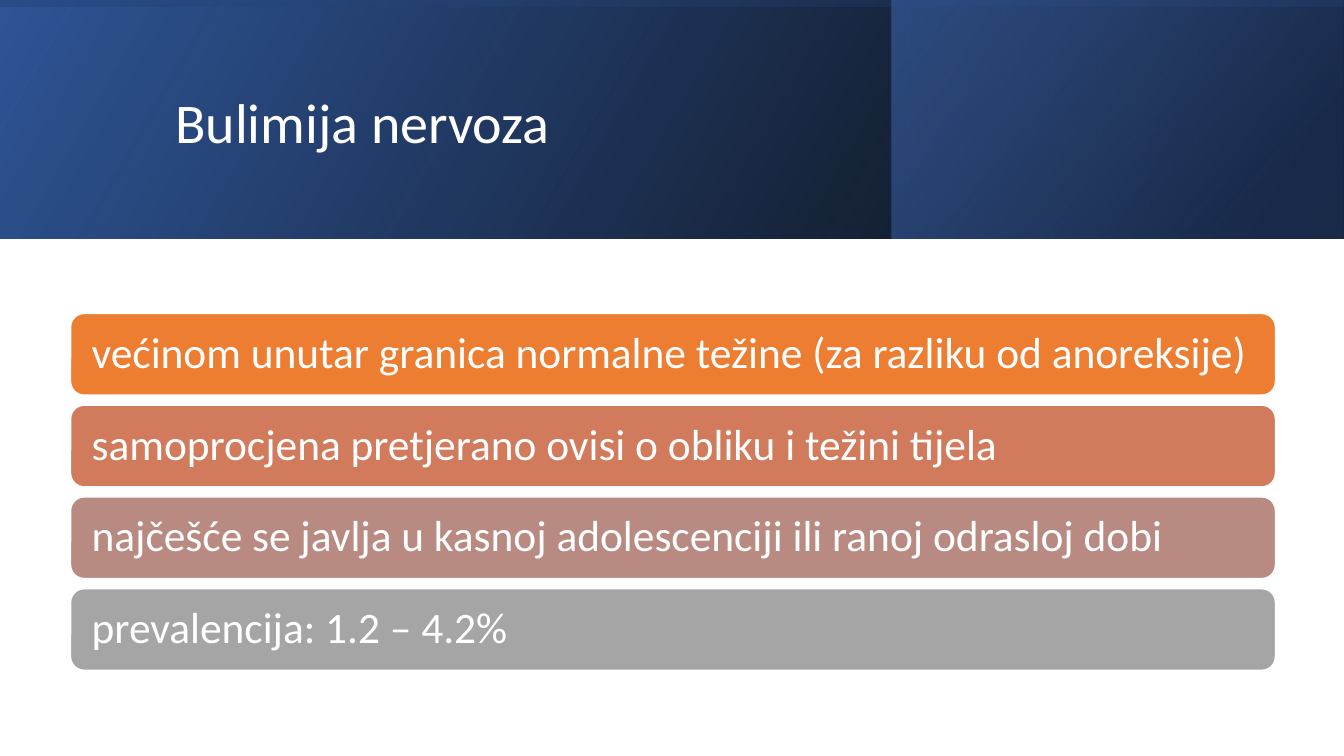
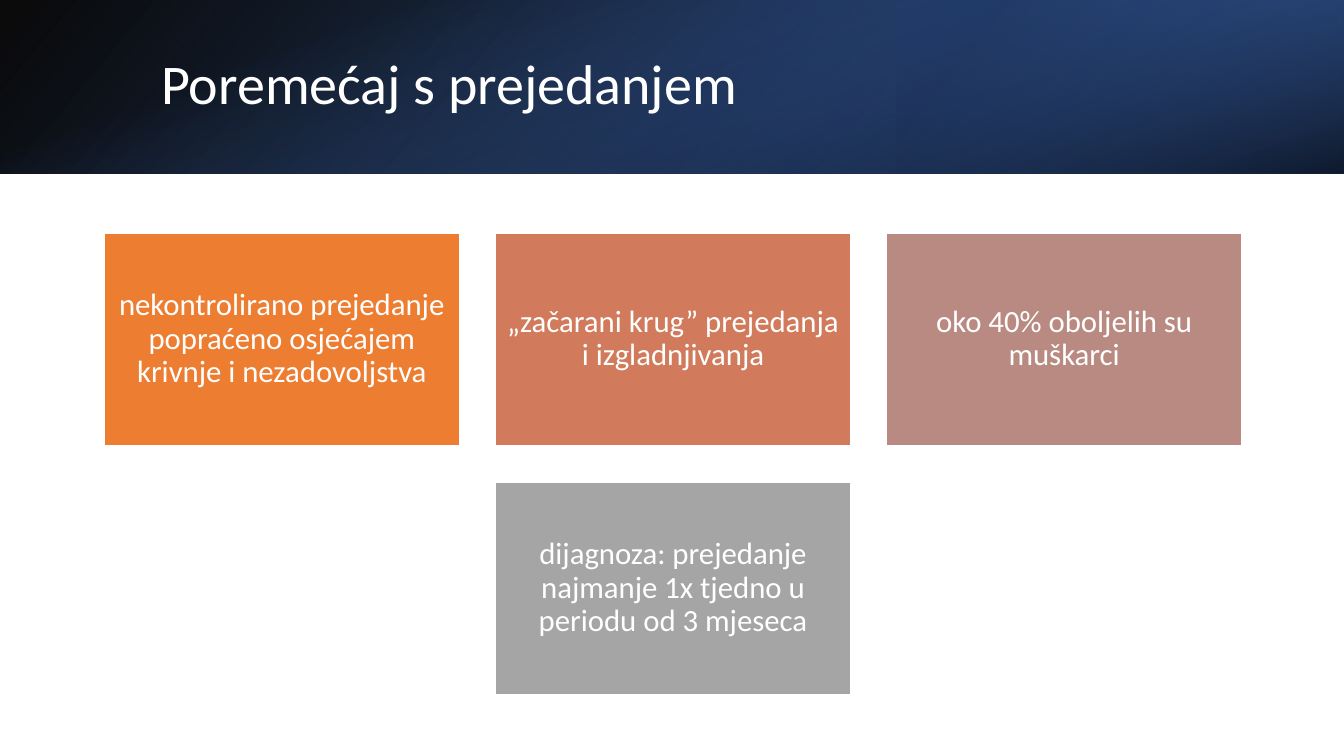
from lxml import etree
from pptx import Presentation
from pptx.dml.color import RGBColor
from pptx.enum.shapes import MSO_SHAPE
from pptx.enum.text import MSO_ANCHOR, PP_ALIGN
from pptx.oxml.ns import qn
from pptx.util import Inches, Pt

RECT, ROUND = MSO_SHAPE.RECTANGLE, MSO_SHAPE.ROUNDED_RECTANGLE
LEFT, CENTER = PP_ALIGN.LEFT, PP_ALIGN.CENTER
MIDDLE = MSO_ANCHOR.MIDDLE

WHITE = RGBColor(0xFF, 0xFF, 0xFF)
BLACK = RGBColor(0x00, 0x00, 0x00)
BLUE = RGBColor(0x2F, 0x55, 0x97)
NAVY = RGBColor(0x20, 0x38, 0x64)
SKY = RGBColor(0x44, 0x72, 0xC4)
CARDS = [
    RGBColor(0xED, 0x7D, 0x31),
    RGBColor(0xD1, 0x7B, 0x5C),
    RGBColor(0xB9, 0x8A, 0x82),
    RGBColor(0xA5, 0xA5, 0xA5),
]
FONT = "Calibri"
WIDE, HIGH = 13.33, 7.5

BASE = [(0, BLACK, 96), (100, BLUE, 100)]

BULIMIA = {
    "title": "Bulimija nervoza",
    "box": (1.64, 0.38, 10.5, 1.72),
    "band": 2.37,
    "layers": [
        {"stops": BASE, "angle": 330},
        {"stops": [(19, NAVY, 68), (100, SKY, 48)], "angle": 320,
         "left": 8.84, "width": 4.48},
        {"stops": [(23, BLUE, 16), (99, BLACK, 45)], "angle": 350, "turn": 270},
    ],
    "items": [
        "većinom unutar granica normalne težine (za razliku od anoreksije)",
        "samoprocjena pretjerano ovisi o obliku i težini tijela",
        "najčešće se javlja u kasnoj adolescenciji ili ranoj odrasloj dobi",
        "prevalencija: 1.2 – 4.2%",
    ],
    "grid": {"cols": 1, "top": 3.11, "size": (11.95, 0.81), "gap": 0.1},
    "kind": ROUND,
    "style": {"size": 31, "inset": 0.17},
}

BINGE = {
    "title": "Poremećaj s prejedanjem",
    "box": (1.5, 0.38, 10.98, 0.96),
    "band": 1.72,
    "layers": [
        {"stops": BASE, "angle": 140},
        {"stops": [(19, NAVY, 68), (100, SKY, 79)], "angle": 320,
         "left": 8.89, "width": 4.44, "turn": 180},
        {"stops": [(23, SKY, 0), (99, BLACK, 74)], "angle": 340,
         "turn": 90, "flip": False},
    ],
    "items": [
        "nekontrolirano prejedanje popraćeno osjećajem krivnje i nezadovoljstva",
        "„začarani krug” prejedanja i izgladnjivanja",
        "oko 40% oboljelih su muškarci",
        "dijagnoza: prejedanje najmanje 1x tjedno u periodu od 3 mjeseca",
    ],
    "grid": {"cols": 3, "top": 2.31, "size": (3.52, 2.11), "gap": 0.36},
    "kind": RECT,
    "style": {"size": 22, "inset": 0.09, "align": CENTER},
}


def write(shape, text, size=40, inset=0.1, align=LEFT):
    frame = shape.text_frame
    frame.word_wrap = True
    frame.vertical_anchor = MIDDLE
    frame.margin_left = frame.margin_right = Inches(inset)
    frame.margin_top = frame.margin_bottom = Inches(min(inset, 0.1))
    para = frame.paragraphs[0]
    para.alignment, para.line_spacing = align, 0.9
    run = para.add_run()
    run.text = text
    run.font.name, run.font.size = FONT, Pt(size)
    run.font.color.rgb = WHITE


def block(slide, kind, *box):
    shape = slide.shapes.add_shape(kind, *map(Inches, box))
    shape.shadow.inherit = False
    return shape


def layer(slide, band, stops, angle, left=0, width=WIDE, turn=0, flip=True):
    wide, high = (band, width) if turn % 180 else (width, band)
    x = left + (width - wide) / 2
    shape = block(slide, RECT, x, (band - high) / 2, wide, high)
    shape.rotation = turn
    shape.line.fill.background()
    shape.fill.gradient()
    shape.fill.gradient_angle = 360 - angle
    props = shape._element.spPr
    if flip:
        props.find(qn("a:xfrm")).set("flipH", "1")
    nodes = props.iter(qn("a:gs"))
    for stop, node, (place, color, alpha) in zip(
            shape.fill.gradient_stops, nodes, stops):
        stop.position = place / 100
        stop.color.rgb = color
        tint = node.find(qn("a:srgbClr"))
        etree.SubElement(tint, qn("a:alpha")).set("val", str(alpha * 1000))


def cards(slide, items, kind, style, cols, top, size, gap):
    wide, high = size
    for i, (text, color) in enumerate(zip(items, CARDS)):
        row, col = divmod(i, cols)
        count = min(cols, len(items) - row * cols)
        left = (WIDE + 0.02 - count * wide - (count - 1) * gap) / 2
        x, y = left + col * (wide + gap), top + row * (high + gap)
        card = block(slide, kind, x, y, wide, high)
        card.fill.solid()
        card.fill.fore_color.rgb = color
        card.line.color.rgb = WHITE
        card.line.width = Pt(1)
        write(card, text, **style)


def build(deck, page):
    slide = deck.slides.add_slide(deck.slide_layouts[6])
    for part in page["layers"]:
        layer(slide, page["band"], **part)
    title = slide.shapes.add_textbox(*map(Inches, page["box"]))
    write(title, page["title"])
    cards(slide, page["items"], page["kind"], page["style"], **page["grid"])


def main():
    deck = Presentation()
    deck.slide_width, deck.slide_height = Inches(WIDE), Inches(HIGH)
    for page in (BULIMIA, BINGE):
        build(deck, page)
    deck.save("out.pptx")


if __name__ == "__main__":
    main()
